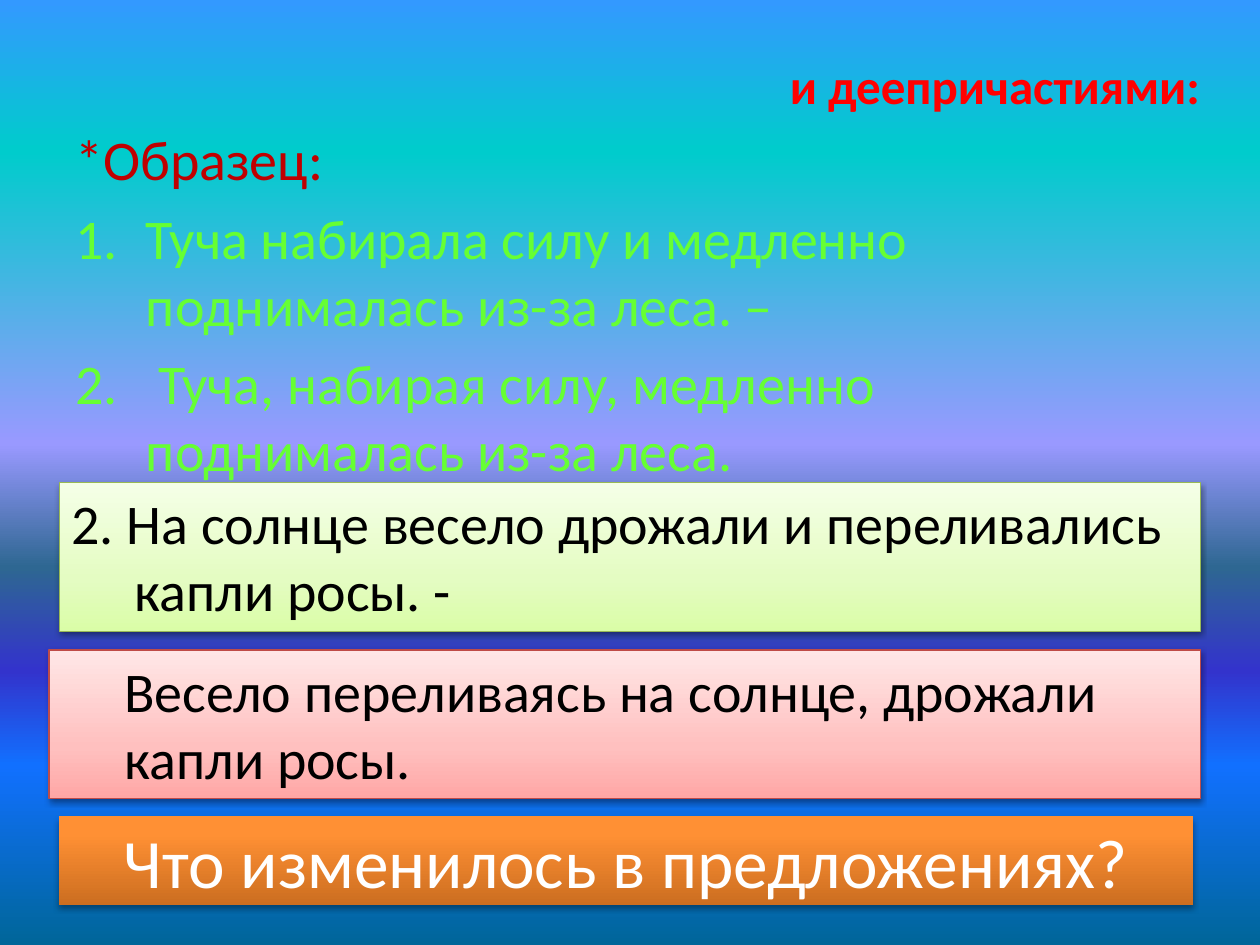
from lxml.etree import SubElement
from pptx import Presentation
from pptx.dml.color import RGBColor
from pptx.enum.shapes import MSO_SHAPE
from pptx.enum.text import MSO_ANCHOR, PP_ALIGN
from pptx.oxml.ns import qn
from pptx.util import Inches, Pt

SKY = [(0, "3399FF"), (16, "00CCCC"), (47, "9999FF"), (60, "2E6792"),
       (71, "3333CC"), (81, "1170FF"), (100, "006699")]
GREEN = [(0, "DAFDA7"), (35, "E4FCC2"), (100, "F5FFE7")]
PINK = [(0, "FFA6A5"), (35, "FFC0BF"), (100, "FFE7E7")]
ORANGE = [(0, "CC6E20"), (80, "FF9034"), (100, "FF9136")]


def color(value):
    return RGBColor.from_string(value)


def fill_gradient(fill, owner, stops, angle):
    fill.gradient()
    fill.gradient_angle = angle
    stop_list = next(owner.iter(qn("a:gsLst")))
    for old_stop in list(stop_list):
        stop_list.remove(old_stop)
    for position, value in stops:
        stop = SubElement(stop_list, qn("a:gs"), pos=str(position * 1000))
        SubElement(stop, qn("a:srgbClr"), val=value)


def add_shadow(shape, opacity, distance):
    shape.shadow.inherit = False
    effects = shape._element.spPr.find(qn("a:effectLst"))
    shadow = SubElement(effects, qn("a:outerShdw"), blurRad=str(Pt(3.1)),
                        dist=str(Pt(distance)), dir="5400000", rotWithShape="0")
    black = SubElement(shadow, qn("a:srgbClr"), val="000000")
    SubElement(black, qn("a:alpha"), val=str(opacity * 1000))


def write_run(paragraph, text, size, value, bold=False):
    run = paragraph.add_run()
    run.text = text
    run.font.name = "Calibri"
    run.font.size = Pt(size)
    run.font.bold = bold
    run.font.color.rgb = color(value)


def write_paragraphs(frame, lines, size):
    for index, (text, value) in enumerate(lines):
        paragraph = frame.paragraphs[0] if index == 0 else frame.add_paragraph()
        write_run(paragraph, text, size, value)
    return frame.paragraphs


def set_indent(paragraph, left, first=0):
    properties = paragraph._p.get_or_add_pPr()
    properties.set("marL", str(Inches(left)))
    properties.set("indent", str(Inches(first)))
    return properties


def add_heading(slide, box):
    frame = slide.shapes.add_textbox(*map(Inches, box)).text_frame
    frame.word_wrap = True
    write_run(frame.paragraphs[0], "и деепричастиями:", 28, "FF0000", True)


def add_sample(slide, box):
    frame = slide.shapes.add_textbox(*map(Inches, box)).text_frame
    frame.word_wrap = True
    lines = [("*Образец:", "C00000"),
             ("Туча набирала силу и медленно поднималась из-за леса. –", "66FF33"),
             (" Туча, набирая силу, медленно поднималась из-за леса.", "66FF33")]
    for index, paragraph in enumerate(write_paragraphs(frame, lines, 32)):
        paragraph.space_before = Pt(6.4)
        properties = set_indent(paragraph, 0.56, -0.56)
        if index:
            SubElement(properties, qn("a:buFont"), typeface="+mj-lt")
            SubElement(properties, qn("a:buAutoNum"), type="arabicPeriod")


def add_panel(slide, box, stops, border=None, opacity=38, distance=1.6):
    panel = slide.shapes.add_shape(MSO_SHAPE.RECTANGLE, *map(Inches, box))
    fill_gradient(panel.fill, panel._element, stops, 90)
    if border:
        panel.line.color.rgb = color(border)
        panel.line.width = Pt(0.75)
    else:
        panel.line.fill.background()
    add_shadow(panel, opacity, distance)
    panel.text_frame.word_wrap = True
    return panel.text_frame


def add_sentence(slide, box, stops, border, lines, indents):
    frame = add_panel(slide, box, stops, border)
    frame.vertical_anchor = MSO_ANCHOR.TOP
    black_lines = [(line, "000000") for line in lines]
    for paragraph, indent in zip(write_paragraphs(frame, black_lines, 32), indents):
        paragraph.alignment = PP_ALIGN.LEFT
        set_indent(paragraph, indent)


def add_question(slide, box):
    frame = add_panel(slide, box, ORANGE, opacity=35, distance=1.8)
    frame.vertical_anchor = MSO_ANCHOR.MIDDLE
    question = frame.paragraphs[0]
    question.alignment = PP_ALIGN.CENTER
    write_run(question, "Что изменилось в предложениях?", 39.6, "FFFFFF")


def main():
    deck = Presentation()
    deck.slide_width, deck.slide_height = Inches(10), Inches(7.5)
    slide = deck.slides.add_slide(deck.slide_layouts[6])
    fill_gradient(slide.background.fill, slide._element, SKY, 270)
    add_sample(slide, (0.5, 0.94, 9, 2.73))
    add_heading(slide, (6.17, 0.39, 3.52, 0.57))
    add_sentence(slide, (0.47, 3.83, 9.06, 1.18), GREEN, "98B955",
                 ["2. На солнце весело дрожали и переливались", "капли росы. -"],
                 [0, 0.5])
    add_sentence(slide, (0.39, 5.16, 9.14, 1.18), PINK, "BF4C48",
                 ["Весело переливаясь на солнце, дрожали", "капли росы."],
                 [0.5, 0.5])
    add_question(slide, (0.47, 6.48, 9, 0.7))
    deck.save("out.pptx")


if __name__ == "__main__":
    main()
